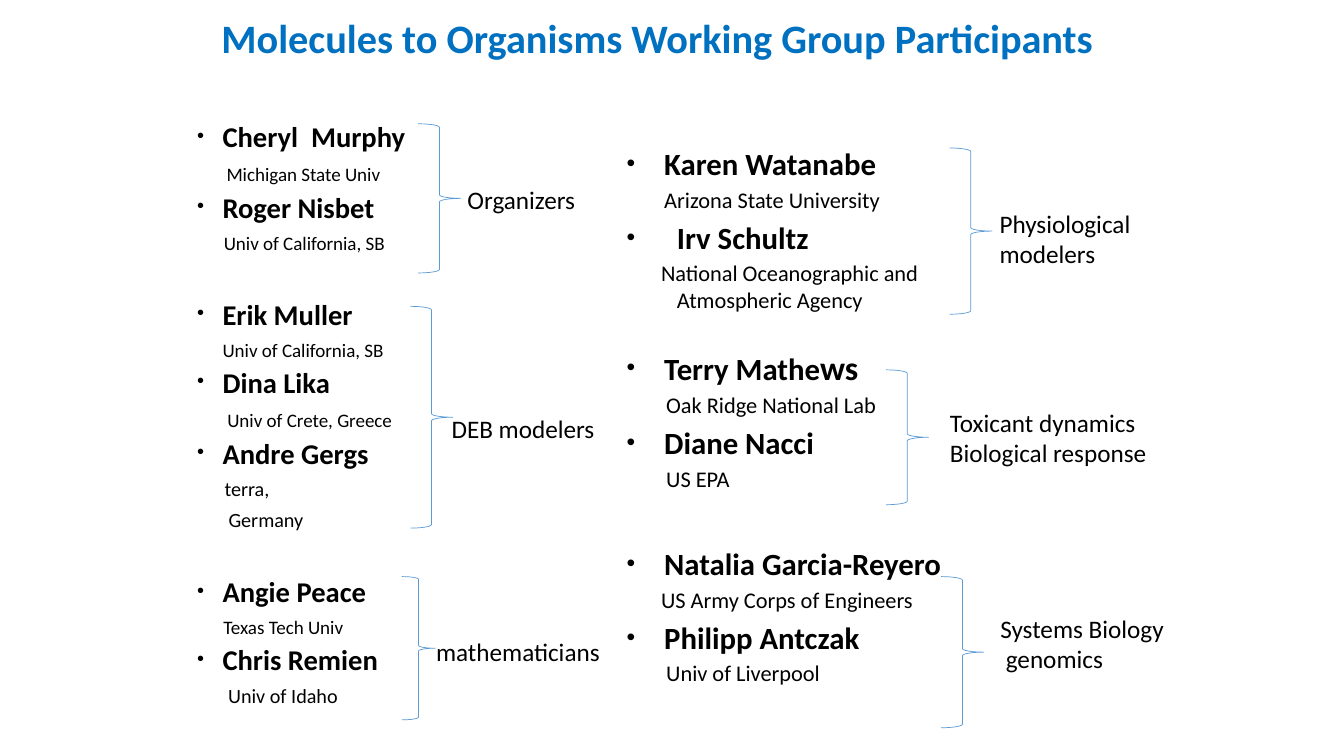
from dataclasses import dataclass

from lxml import etree
from pptx import Presentation
from pptx import util as u
from pptx.dml.color import RGBColor
from pptx.enum import shapes, text
from pptx.oxml import ns

FONT = "Calibri"
BLACK, TITLE_BLUE, BRACE_BLUE = "000000", "0070C0", "5B9BD5"


@dataclass
class Name:
    text: str
    before: float
    indent: float


@dataclass
class Affiliation:
    text: str
    indent: float
    size: float
    before: float
    hanging: float = 0


@dataclass
class Column:
    box: tuple[float, float, float, float]
    name_size: float
    line_spacing: float
    bullet_percent: int
    entries: list[Name | Affiliation]


@dataclass
class Group:
    brace: tuple[float, float, float, float]
    label_box: tuple[float, float, float, float]
    lines: list[str]
    last_indent: float = 0


# Participants: names carry bullets, affiliations follow beneath
LEFT = Column((4.72, 3.12, 10.24, 14.96), 20.4, 0.7, 70, [
    Name("Cheryl  Murphy", 10, 0.64),
    Affiliation("Michigan State Univ", 0.74, 13.6, 11.5),
    Name("Roger Nisbet", 10, 0.64),
    Affiliation("Univ of California, SB", 0.67, 13.6, 10.7),
    Name("Erik Muller", 37.4, 0.64),
    Affiliation("Univ of California, SB", 0.64, 13.6, 10),
    Name("Dina Lika", 10, 0.64),
    Affiliation("Univ of Crete, Greece", 0.76, 13.6, 12.1),
    Name("Andre Gergs", 10, 0.64),
    Affiliation("terra,", 0.69, 14.4, 10),
    Affiliation("Germany", 0.79, 14.4, 10),
    Name("Angie Peace", 37.4, 0.64),
    Affiliation("Texas Tech Univ", 0.66, 13.6, 10),
    Name("Chris Remien", 10, 0.64),
    Affiliation("Univ of Idaho", 0.78, 14.4, 10),
])
RIGHT = Column((15.54, 3.52, 10.39, 14), 22, 1, 80, [
    Name("Karen Watanabe", 0, 0.95),
    Affiliation("Arizona State University", 0.95, 16, 3),
    Name("Irv Schultz", 4, 1.27),
    Affiliation("National Oceanographic and Atmospheric Agency", 1.27, 16, 3, 0.4),
    Name("Terry Mathews", 24.2, 0.95),
    Affiliation("Oak Ridge National Lab", 1, 16, 3),
    Name("Diane Nacci", 4, 0.95),
    Affiliation("US EPA", 1, 16, 3),
    Name("Natalia Garcia-Reyero", 37.6, 0.95),
    Affiliation("US Army Corps of Engineers", 0.87, 16, 3),
    Name("Philipp Antczak", 4, 0.95),
    Affiliation("Univ of Liverpool", 1, 16, 3),
])

# Braces and the roles they point to
GROUPS = [
    Group((10.54, 3.12, 1.07, 3.76), (11.53, 4.52, 3.6, 1.02), ["Organizers"]),
    Group((10.34, 7.72, 1.07, 5.59), (11.13, 10.29, 4.5, 1.02), ["DEB modelers"]),
    Group((10.13, 14.53, 0.84, 3.61), (10.74, 15.9, 4.93, 1.02), ["mathematicians"]),
    Group((23.93, 3.73, 1.07, 4.19), (24.94, 5.13, 4.3, 1.8),
          ["Physiological", "modelers"]),
    Group((22.33, 9.32, 1.07, 3.4), (23.69, 10.13, 6, 1.8),
          ["Toxicant dynamics", "Biological response"]),
    Group((23.72, 14.53, 1.07, 3.81), (24.96, 15.32, 5, 1.8),
          ["Systems Biology", "genomics"], 0.14),
]


def color(value: str) -> RGBColor:
    return RGBColor.from_string(value)


def add_text_frame(slide, box):
    frame = slide.shapes.add_textbox(*map(u.Cm, box)).text_frame
    frame.word_wrap = True
    return frame


def next_paragraph(frame, index: int):
    return frame.add_paragraph() if index else frame.paragraphs[0]


def set_font(font, size: float, bold: bool = False, hex_color: str = BLACK) -> None:
    font.name, font.size, font.bold = FONT, u.Pt(size), bold
    font.color.rgb = color(hex_color)


def set_indent(paragraph, left: float, first: float) -> None:
    properties = paragraph._p.get_or_add_pPr()
    properties.set("marL", str(u.Cm(left)))
    properties.set("indent", str(u.Cm(first)))


def add_bullet(paragraph, percent: int) -> None:
    properties = paragraph._p.get_or_add_pPr()
    for tag, key, value in (("a:buSzPct", "val", str(percent * 1000)),
                            ("a:buFont", "typeface", "Arial"),
                            ("a:buChar", "char", "•")):
        etree.SubElement(properties, ns.qn(tag)).set(key, value)


def draw_title(slide) -> None:
    frame = add_text_frame(slide, (5.33, -0.08, 23.6, 2.21))
    frame.vertical_anchor = text.MSO_ANCHOR.MIDDLE
    paragraph = frame.paragraphs[0]
    paragraph.text = "Molecules to Organisms Working Group Participants"
    paragraph.line_spacing = 0.9
    set_font(paragraph.font, 28.8, True, TITLE_BLUE)


def draw_column(slide, column: Column) -> None:
    frame = add_text_frame(slide, column.box)
    for index, entry in enumerate(column.entries):
        paragraph = next_paragraph(frame, index)
        paragraph.text = entry.text
        paragraph.line_spacing = column.line_spacing
        paragraph.space_before = u.Pt(entry.before)
        if isinstance(entry, Name):
            set_font(paragraph.font, column.name_size, True)
            set_indent(paragraph, entry.indent, -entry.indent)
            add_bullet(paragraph, column.bullet_percent)
        else:
            set_font(paragraph.font, entry.size)
            set_indent(paragraph, entry.indent, -entry.hanging)
        # The end of this surname is slightly larger
        if entry.text == "Terry Mathews":
            paragraph.runs[0].text = "Terry Mathe"
            ending = paragraph.add_run()
            ending.text = "ws"
            ending.font.size = u.Pt(24)


def draw_group(slide, group: Group) -> None:
    brace = slide.shapes.add_shape(shapes.MSO_SHAPE.RIGHT_BRACE,
                                   *map(u.Cm, group.brace))
    brace.shadow.inherit = False
    brace.fill.background()
    brace.line.color.rgb = color(BRACE_BLUE)
    brace.line.width = u.Pt(0.5)
    frame = add_text_frame(slide, group.label_box)
    for index, line in enumerate(group.lines):
        paragraph = next_paragraph(frame, index)
        paragraph.text = line
        set_font(paragraph.font, 18)
    set_indent(paragraph, group.last_indent, 0)


def main() -> None:
    presentation = Presentation()
    presentation.slide_width, presentation.slide_height = u.Cm(33.87), u.Cm(19.05)
    slide = presentation.slides.add_slide(presentation.slide_layouts[6])
    draw_title(slide)
    for column in (LEFT, RIGHT):
        draw_column(slide, column)
    for group in GROUPS:
        draw_group(slide, group)
    presentation.save("out.pptx")


if __name__ == "__main__":
    main()
